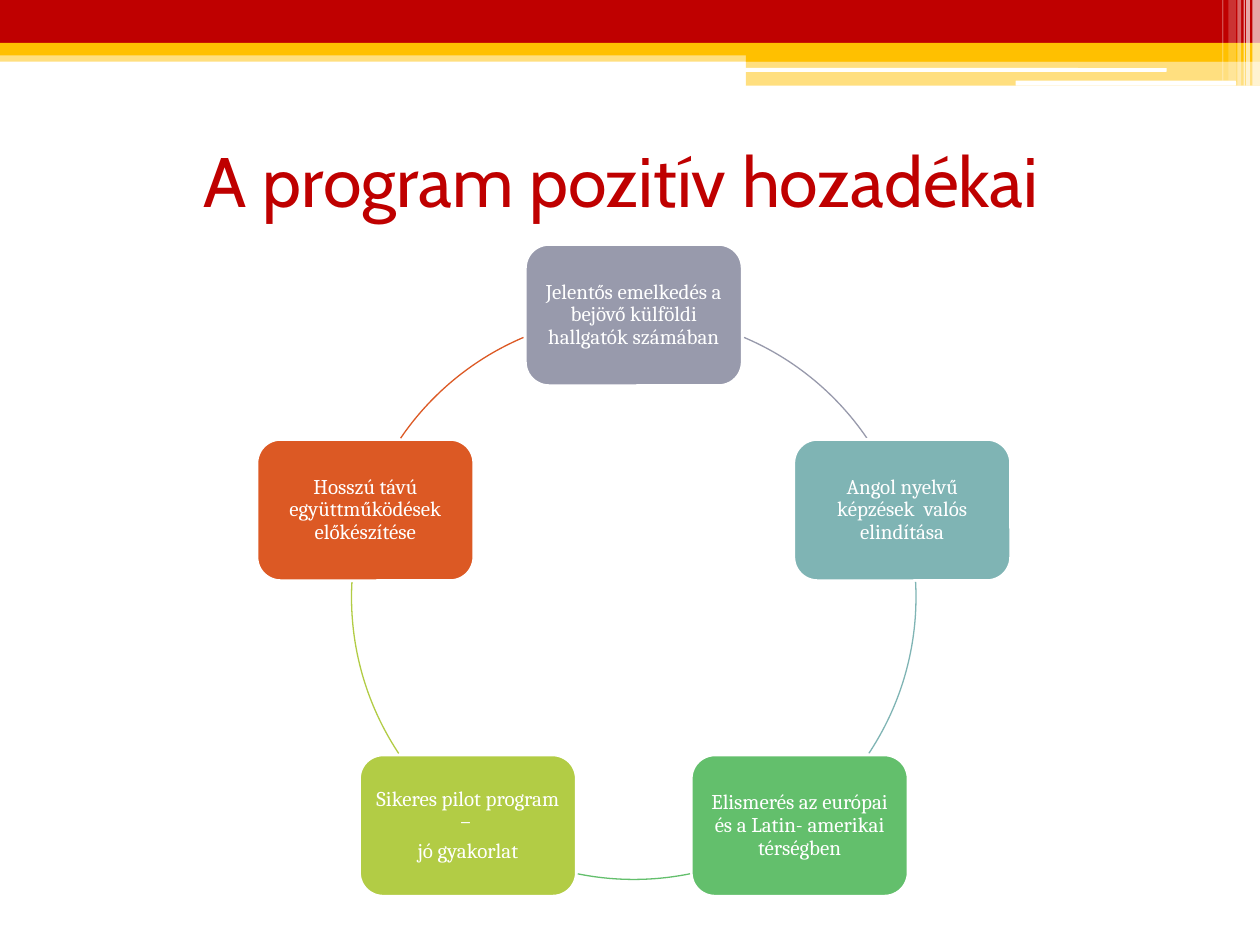
from math import cos, radians, sin

from lxml import etree
from pptx import Presentation
from pptx.dml.color import RGBColor
from pptx.enum.shapes import MSO_SHAPE
from pptx.enum.text import MSO_ANCHOR, PP_ALIGN
from pptx.oxml.ns import qn
from pptx.util import Inches, Pt

RECT, ROUNDED, ARC = MSO_SHAPE.RECTANGLE, MSO_SHAPE.ROUNDED_RECTANGLE, MSO_SHAPE.ARC
MIDDLE, CENTER = MSO_ANCHOR.MIDDLE, PP_ALIGN.CENTER

RED = RGBColor(0xBF, 0x00, 0x00)
GOLD = RGBColor(0xFF, 0xC0, 0x00)
WHITE = RGBColor(0xFF, 0xFF, 0xFF)
GREY = RGBColor(0x98, 0x9A, 0xAC)
TEAL = RGBColor(0x7F, 0xB4, 0xB4)
GREEN = RGBColor(0x63, 0xBF, 0x6C)
LIME = RGBColor(0xB2, 0xCC, 0x45)
ORANGE = RGBColor(0xDC, 0x59, 0x24)

# left, top, width, height, colour, opacity in percent
BANDS = [
    (0, 0.4, 10, 0.09, GOLD, 50),
    (0, 0, 10, 0.34, RED, 100),
    (0, 0.34, 10, 0.1, GOLD, 100),
    (5.92, 0.39, 4.08, 0.1, GOLD, 100),
    (5.92, 0.48, 4.08, 0.2, GOLD, 50),
]
SLITS = [(5.91, 0.54, 3.35, 0.03), (8.06, 0.64, 1.75, 0.04)]
# left, width, height, opacity in percent
STRIPES = [
    (9.94, 0.06, 0.68, 65),
    (9.89, 0.03, 0.68, 65),
    (9.87, 0.01, 0.68, 60),
    (9.82, 0.03, 0.68, 40),
    (9.75, 0.06, 0.64, 20),
    (9.7, 0.01, 0.64, 30),
]

# paragraphs, colour, start and end angle of the arc to the next node
# (degrees clockwise from three o'clock)
NODES = [
    (["Jelentős emelkedés a bejövő külföldi hallgatók számában"], GREY, 293, 325.7),
    (["Angol nyelvű képzések  valós elindítása"], TEAL, 356.9, 33.6),
    (["Elismerés az európai és a Latin- amerikai térségben"], GREEN, 78.5, 101.5),
    (["Sikeres pilot program – ", "jó gyakorlat"], LIME, 146.4, 183.1),
    (["Hosszú távú együttműködések előkészítése"], ORANGE, 214.3, 247),
]
NODE_WIDTH, NODE_HEIGHT = 1.72, 1.12

TITLE_FONT = {"name": "Cabin", "size": Pt(40)}
NODE_FONT = {"name": "Cambria", "size": Pt(12)}
NODE_FRAME = {
    "word_wrap": True,
    "vertical_anchor": MIDDLE,
    **{f"margin_{side}": Inches(0.05) for side in ("left", "top", "right", "bottom")},
}
NODE_PARA = {"alignment": CENTER, "line_spacing": 0.9}


def set_all(target, values):
    for name, value in values.items():
        setattr(target, name, value)


def add_shape(page, kind, box, color=None, opacity=100):
    """Add a shape without outline or shadow; no colour means no fill."""
    shape = page.shapes.add_shape(kind, *(Inches(length) for length in box))
    shape.shadow.inherit = False
    shape.line.fill.background()
    if color is None:
        shape.fill.background()
        return shape
    shape.fill.solid()
    shape.fill.fore_color.rgb = color
    if opacity < 100:
        color_element = shape.fill._xPr.find(qn("a:solidFill"))[0]
        etree.SubElement(color_element, qn("a:alpha"), val=str(opacity * 1000))
    return shape


def set_line(shape, color, width):
    shape.line.color.rgb = color
    shape.line.width = Pt(width)


def add_header(page):
    for *box, color, opacity in BANDS:
        add_shape(page, RECT, box, color, opacity)
    for box in SLITS:
        add_shape(page, ROUNDED, box, WHITE)
    for left, width, height, opacity in STRIPES:
        add_shape(page, RECT, (left, 0, width, height), WHITE, opacity)


def add_title(page, box, text):
    title = page.shapes.title
    title.left, title.top, title.width, title.height = map(Inches, box)
    title.text_frame.vertical_anchor = MIDDLE
    para = title.text_frame.paragraphs[0]
    para.text = text
    para.alignment = CENTER
    set_all(para.font, TITLE_FONT)
    para.font.color.rgb = RED


def add_node(page, box, paragraphs, color):
    node = add_shape(page, ROUNDED, box, color)
    set_line(node, WHITE, 1.5)
    frame = node.text_frame
    set_all(frame, NODE_FRAME)
    for index, text in enumerate(paragraphs):
        para = frame.paragraphs[0] if index == 0 else frame.add_paragraph()
        para.text = text
        set_all(para, NODE_PARA)
        para.space_after = Pt(4)
        set_all(para.font, NODE_FONT)
        para.font.color.rgb = WHITE


def add_cycle(page, box):
    """Spread the nodes evenly on the circle that fills the box."""
    left, top, diameter, _ = box
    radius = diameter / 2
    for index, (paragraphs, color, start, end) in enumerate(NODES):
        angle = radians(360 / len(NODES) * index - 90)
        node_left = left + radius * (1 + cos(angle)) - NODE_WIDTH / 2
        node_top = top + radius * (1 + sin(angle)) - NODE_HEIGHT / 2
        add_node(page, (node_left, node_top, NODE_WIDTH, NODE_HEIGHT), paragraphs, color)
        arc = add_shape(page, ARC, box)
        # Angles are stored in 1/60000 degree, adjustments in 1/100000
        arc.adjustments[0] = start * 0.6
        arc.adjustments[1] = end * 0.6
        set_line(arc, color, 0.75)


def main():
    deck = Presentation()
    deck.slide_width, deck.slide_height = Inches(10), Inches(7.5)
    page = deck.slides.add_slide(deck.slide_layouts[5])
    add_header(page)
    add_title(page, (0.43, 0.84, 9, 1.17), "A program pozitív hozadékai")
    add_cycle(page, (2.79, 2.5, 4.48, 4.48))
    deck.save("out.pptx")


if __name__ == "__main__":
    main()
